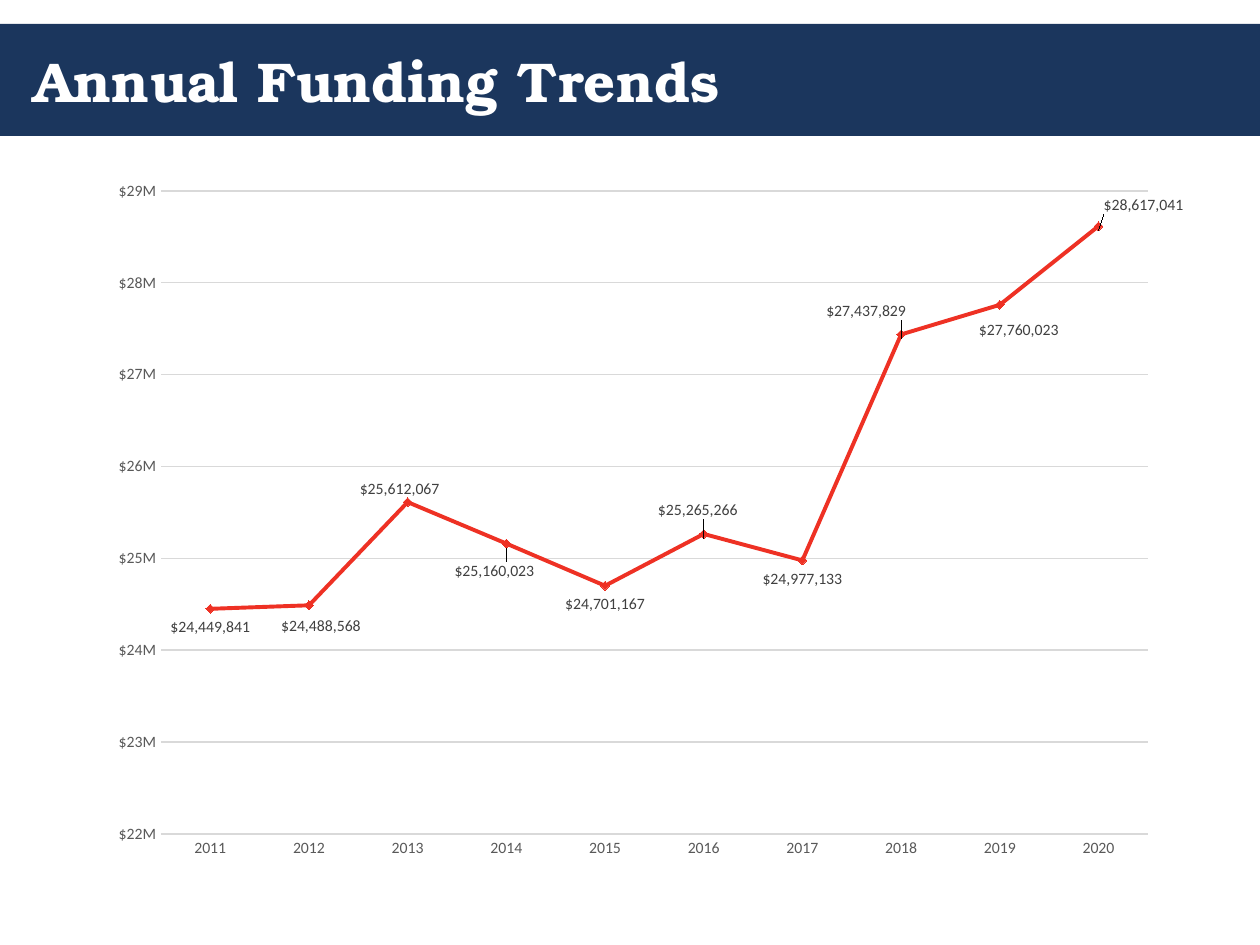
from lxml.etree import SubElement
from pptx import Presentation
from pptx.chart.data import CategoryChartData
from pptx.dml.color import RGBColor
from pptx.enum.chart import XL_CHART_TYPE, XL_LABEL_POSITION, XL_MARKER_STYLE, XL_TICK_MARK
from pptx.enum.shapes import MSO_SHAPE
from pptx.enum.text import MSO_ANCHOR, PP_ALIGN
from pptx.oxml.ns import qn
from pptx.util import Pt

EMU_PER_PX = 914400 // 126
NAVY, RED, WHITE = "1B365D", "EE3124", "FFFFFF"
GRID, AXIS_TEXT, LABEL_TEXT = "D9D9D9", "595959", "404040"
DOLLARS = '"$"#,##0'
MILLIONS = r'[>999999]\ "$"#,,"M";#,"K"'

FUNDING = {
    2011: 24449841, 2012: 24488568, 2013: 25612067, 2014: 25160023,
    2015: 24701167, 2016: 25265266, 2017: 24977133, 2018: 27437829,
    2019: 27760023, 2020: 28617041,
}
LABEL_SHIFTS = {
    2012: (12, 2), 2013: (-8, -31), 2014: (-12, 9), 2016: (-6, -42),
    2018: (-35, -42), 2019: (19, 7), 2020: (45, -39),
}


def px(length):
    return length * EMU_PER_PX


def color(hex_string):
    return RGBColor.from_string(hex_string)


def style_font(font, name, size, hex_string, bold=False):
    font.name = name
    font.size = Pt(size)
    font.bold = bold
    font.color.rgb = color(hex_string)


def style_line(line, hex_string, width):
    line.color.rgb = color(hex_string)
    line.width = Pt(width)


def add_layout(parent, position, **settings):
    layout = SubElement(parent, qn("c:layout"))
    parent.insert(position, layout)
    manual = SubElement(layout, qn("c:manualLayout"))
    for tag, value in settings.items():
        SubElement(manual, qn(f"c:{tag}")).set("val", str(value))


def add_header(slide, left, top, width, height):
    band = slide.shapes.add_shape(
        MSO_SHAPE.RECTANGLE, px(left), px(top), px(width), px(height))
    band.shadow.inherit = False
    band.fill.solid()
    band.fill.fore_color.rgb = color(NAVY)
    band.line.fill.background()

    title = slide.shapes.title
    band._element.addnext(title._element)
    title.left, title.top = px(left + 21), px(top)
    title.width, title.height = px(width - 42), px(height)
    title.text_frame.vertical_anchor = MSO_ANCHOR.MIDDLE
    heading = title.text_frame.paragraphs[0]
    heading.alignment = PP_ALIGN.LEFT
    run = heading.add_run()
    run.text = "Annual Funding Trends"
    style_font(run.font, "TeX Gyre Bonum", 32, WHITE, bold=True)


def style_axes(chart):
    years, amounts = chart.category_axis, chart.value_axis
    for axis in (years, amounts):
        axis.major_tick_mark = axis.minor_tick_mark = XL_TICK_MARK.NONE
        style_font(axis.tick_labels.font, "Calibri", 9, AXIS_TEXT)
    style_line(years.format.line, GRID, 0.75)
    amounts.minimum_scale = 22_000_000
    amounts.maximum_scale = 29_000_000
    amounts.major_unit = 1_000_000
    amounts.tick_labels.number_format = MILLIONS
    amounts.tick_labels.number_format_is_linked = False
    amounts.format.line.fill.background()
    style_line(amounts.major_gridlines.format.line, GRID, 0.75)


def style_series(series):
    series.smooth = False
    style_line(series.format.line, RED, 2.25)
    series.marker.style = XL_MARKER_STYLE.DIAMOND
    series.marker.size = 5
    series.marker.format.fill.solid()
    series.marker.format.fill.fore_color.rgb = color(RED)
    style_line(series.marker.format.line, RED, 0.75)


def add_value_labels(series, width, height):
    labels = series.data_labels
    labels.show_value = True
    labels.number_format = DOLLARS
    labels.number_format_is_linked = False
    labels.position = XL_LABEL_POSITION.BELOW
    style_font(labels.font, "Calibri", 9, LABEL_TEXT)
    for index, year in enumerate(FUNDING):
        if year in LABEL_SHIFTS:
            right, down = LABEL_SHIFTS[year]
            label = series.points[index].data_label
            style_font(label.font, "Calibri", 9, LABEL_TEXT)
            label.position = XL_LABEL_POSITION.BELOW
            element = labels._element.find(f"{qn('c:dLbl')}[{qn('c:idx')}][last()]")
            add_layout(element, 1, x=right / width, y=down / height)


def add_funding_chart(slide, left, top, width, height):
    funding = CategoryChartData(number_format=DOLLARS)
    funding.categories = [str(year) for year in FUNDING]
    funding.add_series("Series 1", FUNDING.values())
    chart = slide.shapes.add_chart(
        XL_CHART_TYPE.LINE_MARKERS, px(left), px(top), px(width), px(height),
        funding).chart
    chart.has_legend = False
    chart.has_title = False
    style_font(chart.font, "Calibri", 10, "000000")
    plot = chart.plots[0]
    plot.vary_by_categories = False
    style_axes(chart)
    style_series(plot.series[0])
    add_value_labels(plot.series[0], width, height)

    plot_area = chart._chartSpace.chart.plotArea
    for automatic in plot_area.findall(qn("c:layout")):
        plot_area.remove(automatic)
    add_layout(plot_area, 0, layoutTarget="inner", xMode="edge", yMode="edge",
               x=66 / width, y=23 / height, w=987 / width, h=643 / height)


def main():
    deck = Presentation()
    deck.slide_width, deck.slide_height = px(1260), px(945)
    slide = deck.slides.add_slide(deck.slide_layouts[5])
    add_header(slide, 0, 24, 1260, 112)
    add_funding_chart(slide, 95, 168, 1092, 703)
    deck.save("out.pptx")


if __name__ == "__main__":
    main()
